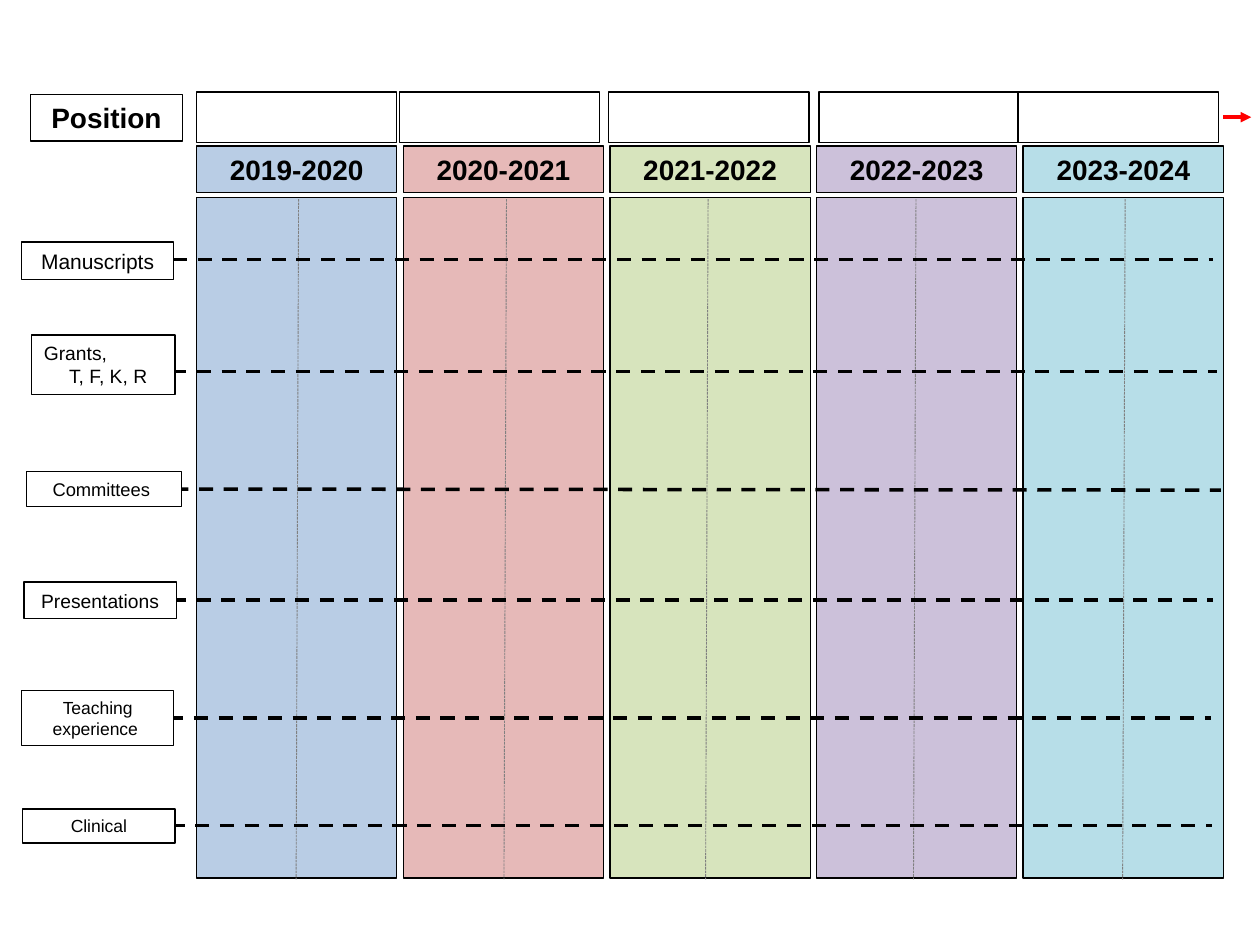
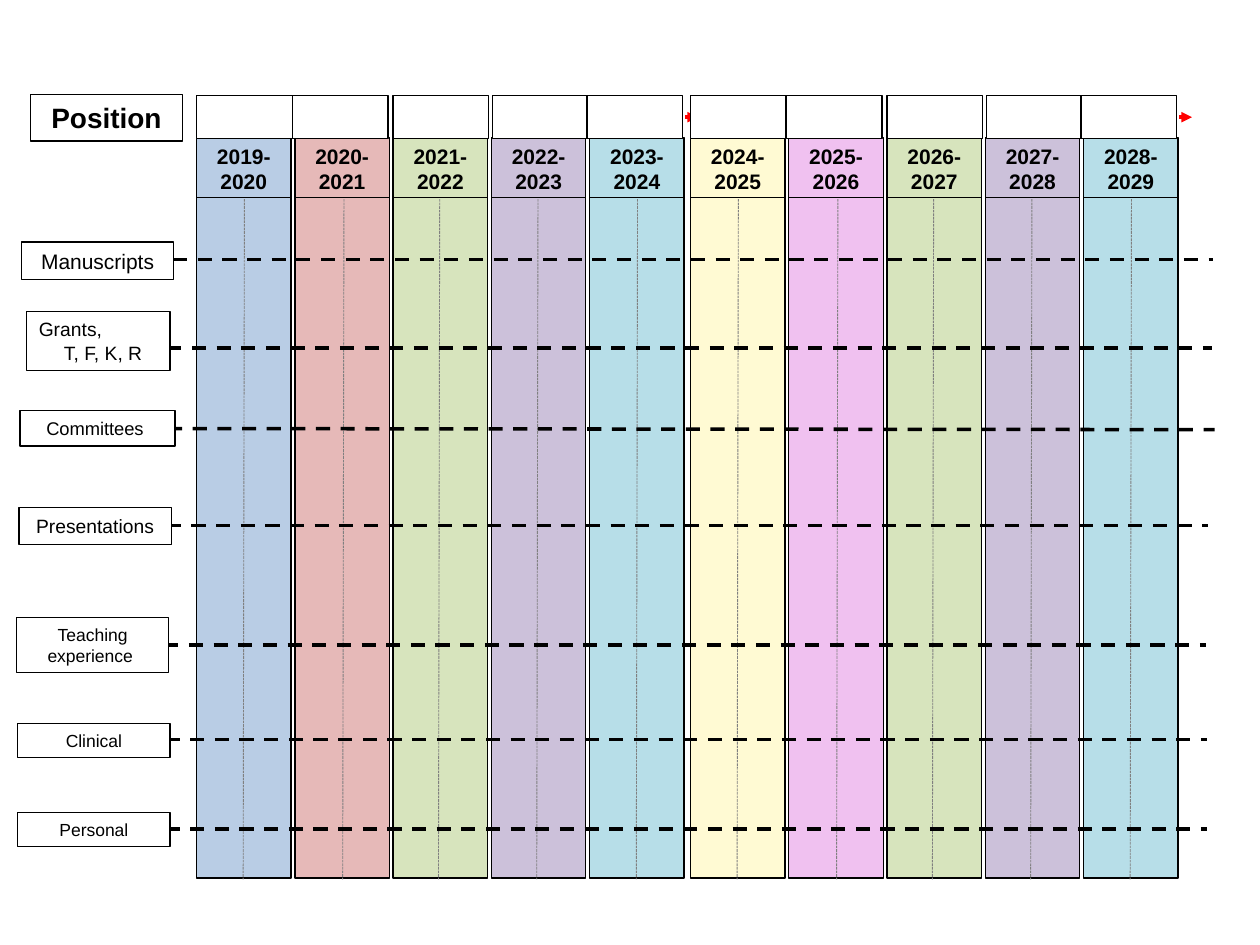
from dataclasses import dataclass

from lxml.etree import SubElement
from pptx import Presentation
from pptx.dml.color import RGBColor
from pptx.enum.dml import MSO_LINE as Dash
from pptx.enum.shapes import MSO_CONNECTOR as Link, MSO_SHAPE as Form
from pptx.enum.text import MSO_ANCHOR as Anchor, MSO_AUTO_SIZE as Fit, PP_ALIGN as Align
from pptx.oxml.ns import qn
from pptx.util import Inches, Pt

# Shared colours and measures
BLACK, WHITE, GREY, RED = "000000", "FFFFFF", "808080", "FF0000"
BLUE, ROSE, GREEN, MAUVE, AQUA = "B9CDE5", "E6B9B8", "D7E4BD", "CCC1DA", "B7DEE8"
CREAM, PINK = "FFFAD3", "F0C1F0"
FIRST = (BLUE, ROSE, GREEN, MAUVE, AQUA)
LATER = (CREAM, PINK, GREEN, MAUVE, AQUA)
BODY_TOP, BODY_HIGH = 1.57, 5.4
ARROW_Y = 0.93
FRAME = {"word_wrap": True, "auto_size": Fit.SHAPE_TO_FIT_TEXT}


@dataclass
class Style:
    """Measures of a five-year block; offsets count from its left edge."""
    step: float
    width: float
    head_top: float
    head_high: float
    size: float
    box_top: float
    box_wide: float
    box_high: float
    boxes: tuple[float, ...]
    mids: tuple[float, ...]
    lean: float
    arrow: tuple[float, float]


@dataclass
class Block:
    left: float
    year: int
    fills: tuple[str, ...]


@dataclass
class Label:
    text: str
    width: float
    height: float
    size: float
    drop: float
    start: float = 0
    span: float = 9.44
    lean: float = 0


WIDE = Style(1.64, 1.59, 1.16, 0.37, 16, 0.73, 1.59, 0.4,
             (0, 1.61, 3.27, 4.94, 6.52), (0.81, 2.46, 4.06, 5.71, 7.37),
             0.02, (8.15, 8.37))
SLIM = Style(0.78, 0.75, 1.09, 0.5, 12, 0.76, 0.76, 0.34,
             (0, 0.76, 1.56, 2.35, 3.1), (0.38, 1.17, 1.93, 2.71, 3.5),
             0.01, (3.88, 3.98))

PAPERS = Label("Manuscripts", 1.21, 0.3, 12, 0.14, start=0.03, span=9.43)
PANELS = Label("Committees ", 1.23, 0.28, 10.5, 0.14, span=9.48, lean=0.01)
GRANTS = Label("Grants,\nT, F, K, R", 1.14, 0.47, 11, 0.29, start=0.14, span=9.27)
TEACH = Label("Teaching experience ", 1.21, 0.44, 10, 0.22)
TALKS = Label("Presentations", 1.21, 0.29, 11, 0.14)
CLINIC = Label("Clinical", 1.21, 0.27, 10, 0.13)
HOME = Label("Personal", 1.21, 0.27, 10, 0.13)

# Each slide: style, year blocks, and labels with their left and top
SLIDES = (
    (WIDE, (Block(1.56, 2019, FIRST),),
     ((PAPERS, 0.17, 1.92), (PANELS, 0.21, 3.74), (GRANTS, 0.25, 2.66),
      (TEACH, 0.17, 5.48), (TALKS, 0.19, 4.62), (CLINIC, 0.18, 6.42))),
    (SLIM, (Block(1.56, 2019, FIRST), Block(5.48, 2024, LATER)),
     ((PAPERS, 0.17, 1.92), (PANELS, 0.16, 3.26), (GRANTS, 0.21, 2.47),
      (TEACH, 0.13, 4.9), (TALKS, 0.15, 4.03), (CLINIC, 0.14, 5.74),
      (HOME, 0.14, 6.45))),
)


def hue(code: str) -> RGBColor:
    return RGBColor.from_string(code)


def assign(target, values: dict) -> None:
    for name, value in values.items():
        setattr(target, name, value)


def add_box(slide, left: float, top: float, wide: float, high: float,
            fill: str = WHITE):
    box = slide.shapes.add_shape(Form.RECTANGLE, Inches(left), Inches(top),
                                 Inches(wide), Inches(high))
    box.shadow.inherit = False
    box.fill.solid()
    box.fill.fore_color.rgb = hue(fill)
    box.line.color.rgb = hue(BLACK)
    box.line.width = Pt(0.75)
    return box


def write(box, text: str, size: float, bold: bool = False,
          anchor: Anchor = Anchor.MIDDLE) -> None:
    frame = box.text_frame
    assign(frame, {**FRAME, "vertical_anchor": anchor})
    frame.text = text
    for para in frame.paragraphs:
        para.alignment = Align.CENTER
        assign(para.font, {"name": "Arial", "size": Pt(size), "bold": bold})
        para.font.color.rgb = hue(BLACK)


def add_line(slide, x1: float, y1: float, x2: float, y2: float, color: str,
             width: float, dash: Dash | None = None, arrow: bool = False) -> None:
    line = slide.shapes.add_connector(Link.STRAIGHT, Inches(x1), Inches(y1),
                                      Inches(x2), Inches(y2))
    line.line.color.rgb = hue(color)
    assign(line.line, {"width": Pt(width), "dash_style": dash})
    props = line._element.spPr
    if arrow:
        SubElement(props.find(qn("a:ln")), qn("a:tailEnd"), type="triangle")
    SubElement(props, qn("a:effectLst"))


def add_block(slide, block: Block, style: Style) -> None:
    # Year headings, then the columns below them
    lefts = [block.left + i * style.step for i in range(len(block.fills))]
    for i, (left, fill) in enumerate(zip(lefts, block.fills)):
        head = add_box(slide, left, style.head_top, style.width,
                       style.head_high, fill)
        year = block.year + i
        write(head, f"{year}-{year + 1}", style.size, bold=True)
    for left, fill in zip(lefts, block.fills):
        add_box(slide, left, BODY_TOP, style.width, BODY_HIGH, fill)

    # Half-year lines, position boxes and the arrow onward
    for mid in style.mids:
        x = block.left + mid
        add_line(slide, x, 1.58, x - style.lean, 6.98, GREY, 0.5, Dash.SQUARE_DOT)
    for gap in style.boxes:
        add_box(slide, block.left + gap, style.box_top, style.box_wide,
                style.box_high)
    tail, tip = (block.left + x for x in style.arrow)
    add_line(slide, tail, ARROW_Y, tip, ARROW_Y, RED, 2, arrow=True)


def add_label(slide, label: Label, left: float, top: float) -> None:
    x, y = left + label.start, top + label.drop
    add_line(slide, x, y, x + label.span, y + label.lean, BLACK, 2, Dash.DASH)
    box = add_box(slide, left, top, label.width, label.height)
    write(box, label.text, label.size)
    # A second line is set in from the left
    paras = box.text_frame.paragraphs
    if len(paras) > 1:
        for para in paras:
            para.alignment = Align.LEFT
        paras[1]._p.get_or_add_pPr().set("marL", str(Inches(0.2)))


def main() -> None:
    deck = Presentation()
    assign(deck, {"slide_width": Inches(10), "slide_height": Inches(7.5)})
    for style, blocks, labels in SLIDES:
        slide = deck.slides.add_slide(deck.slide_layouts[6])
        write(add_box(slide, 0.24, 0.75, 1.21, 0.37), "Position", 16,
              bold=True, anchor=Anchor.TOP)
        for block in blocks:
            add_block(slide, block, style)
        for label, left, top in labels:
            add_label(slide, label, left, top)
    deck.save("out.pptx")


if __name__ == "__main__":
    main()
